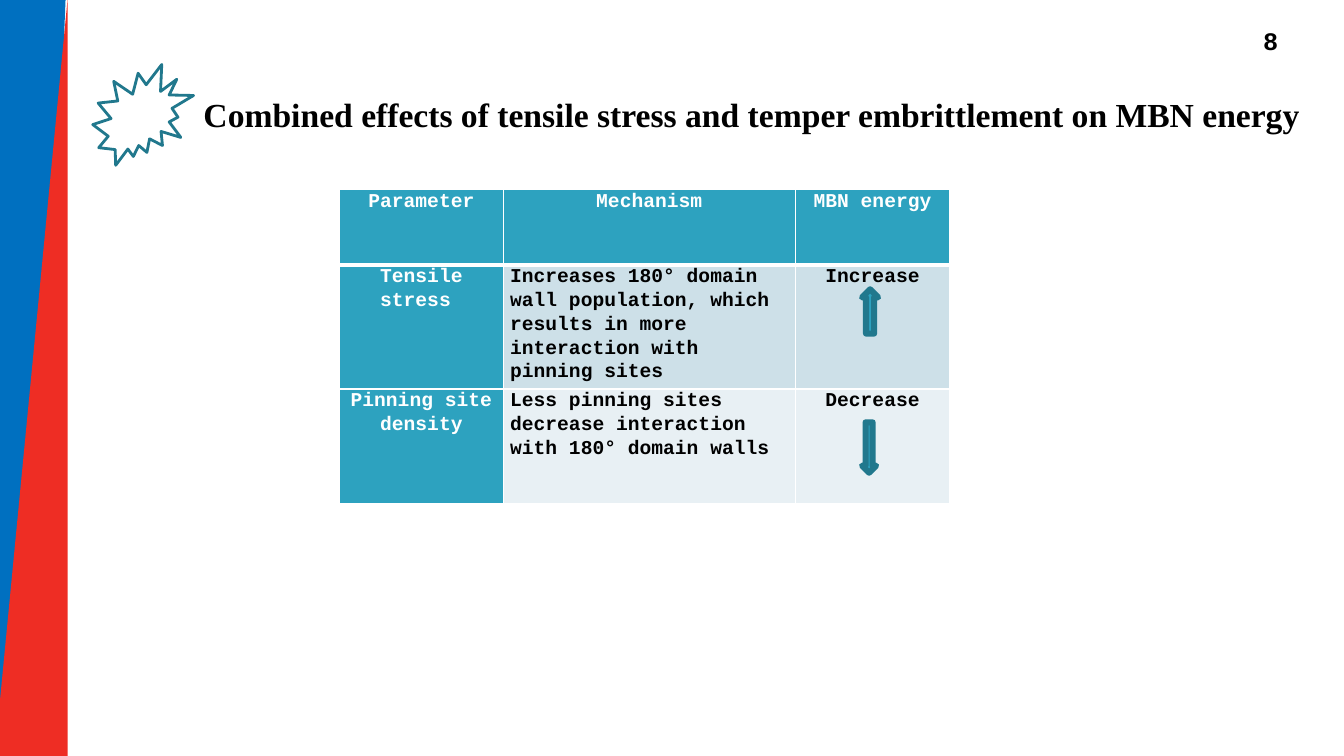
from lxml import etree
from pptx import Presentation
from pptx import util as u
from pptx.dml.color import RGBColor
from pptx.enum import shapes, text
from pptx.oxml.ns import qn

COLORS = {
    "blue": "0070C0", "red": "EE2D24", "teal": "2DA2BF", "outline": "21788D",
    "band1": "CDE0E8", "band2": "E8F0F4", "white": "FFFFFF", "black": "000000",
}
BODY_FONT, TITLE_FONT = "Courier New", "Times New Roman"
CENTER, LEFT = text.PP_ALIGN.CENTER, text.PP_ALIGN.LEFT


def rgb(name):
    return RGBColor.from_string(COLORS[name])


def write_text(tf, words, size=14, font=BODY_FONT, color="black", align=LEFT,
               spacing=None):
    p = tf.paragraphs[0]
    p.alignment = align
    p.line_spacing = spacing
    r = p.add_run()
    r.text = words
    r.font.name, r.font.size, r.font.bold = font, u.Pt(size), True
    r.font.color.rgb = rgb(color)
    return p


def set_borders(cell, bottom):
    """White cell borders, 1 pt wide except for the bottom one."""
    tcPr = cell._tc.get_or_add_tcPr()
    widths = {"a:lnL": 1, "a:lnR": 1, "a:lnT": 1, "a:lnB": bottom}
    for i, (tag, width) in enumerate(widths.items()):
        ln = etree.Element(qn(tag), w=str(u.Pt(width)))
        fill = etree.SubElement(ln, qn("a:solidFill"))
        etree.SubElement(fill, qn("a:srgbClr"), val=COLORS["white"])
        tcPr.insert(i, ln)


class SlideBuilder:
    """Adds styled elements to one slide."""

    def __init__(self, slide):
        self.s = slide

    def paint(self, sp, fill=None, line=None, width=1):
        sp.shadow.inherit = False
        if fill:
            sp.fill.solid()
            sp.fill.fore_color.rgb = rgb(fill)
        else:
            sp.fill.background()
        if line:
            sp.line.color.rgb = rgb(line)
            sp.line.width = u.Pt(width)
        else:
            sp.line.fill.background()

    def polygon(self, points, fill):
        points = [(u.Inches(x), u.Inches(y)) for x, y in points]
        builder = self.s.shapes.build_freeform(*points[0])
        builder.add_line_segments(points[1:], close=True)
        self.paint(builder.convert_to_shape(), fill)

    def shape(self, kind, box, **style):
        sp = self.s.shapes.add_shape(kind, *map(u.Inches, box))
        self.paint(sp, **style)

    def label(self, words, box, wrap=True, indent=0, **fmt):
        tf = self.s.shapes.add_textbox(*map(u.Inches, box)).text_frame
        tf.word_wrap = wrap
        tf.auto_size = text.MSO_AUTO_SIZE.SHAPE_TO_FIT_TEXT
        p = write_text(tf, words, **fmt)
        if indent:
            p._p.get_or_add_pPr().set("marL", str(u.Inches(indent)))

    def table(self, rows, left, top, widths, heights):
        box = (left, top, sum(widths), sum(heights))
        table = self.s.shapes.add_table(
            len(rows), len(widths), *map(u.Inches, box)).table
        for col, width in zip(table.columns, widths):
            col.width = u.Inches(width)
        for row, height in zip(table.rows, heights):
            row.height = u.Inches(height)
        for i, row in enumerate(rows):
            for j, words in enumerate(row):
                self.cell(table.cell(i, j), words, i, j)

    def cell(self, cell, words, i, j):
        header = i == 0 or j == 0
        cell.margin_left = cell.margin_right = u.Inches(0.07)
        cell.margin_top = cell.margin_bottom = 0
        cell.fill.solid()
        cell.fill.fore_color.rgb = rgb("teal" if header else f"band{i}")
        set_borders(cell, bottom=3 if i == 0 else 1)
        write_text(cell.text_frame, words, spacing=1.07,
                   color="white" if header else "black",
                   align=LEFT if j == 1 and i else CENTER)


def main():
    prs = Presentation()
    prs.slide_width, prs.slide_height = u.Inches(13.33), u.Inches(7.5)
    b = SlideBuilder(prs.slides.add_slide(prs.slide_layouts[6]))
    kinds = shapes.MSO_SHAPE

    b.polygon([(0.65, 0), (0, 0), (0, 7.5), (0.35, 7.5)], "blue")
    b.polygon([(0.67, 0), (0.67, 7.5), (0, 7.5), (0, 6.95)], "red")

    b.table([
        ("Parameter", "Mechanism", "MBN energy"),
        ("Tensile stress ",
         "Increases 180° domain wall population, which results in more "
         "interaction with pinning sites", "Increase"),
        ("Pinning site density",
         "Less pinning sites decrease interaction with 180° domain walls",
         "Decrease"),
    ], 3.37, 1.88, widths=(1.62, 2.9, 1.53), heights=(0.75, 1.23, 1.14))

    b.label("Combined effects of tensile stress and temper embrittlement "
            "on MBN energy", (1.92, 0.88, 11.27, 0.5), wrap=False,
            size=24, font=TITLE_FONT)
    arrow = dict(fill="teal", line="outline", width=4.33)
    b.shape(kinds.UP_ARROW, (8.55, 2.87, 0.16, 0.44), **arrow)
    b.shape(kinds.DOWN_ARROW, (8.55, 4.19, 0.14, 0.5), **arrow)
    b.shape(kinds.EXPLOSION2, (0.92, 0.64, 1, 1), line="outline", width=2)
    b.label("8", (11.93, 0.2, 0.43, 0.4), indent=0.5, size=18)

    prs.save("out.pptx")


if __name__ == "__main__":
    main()
